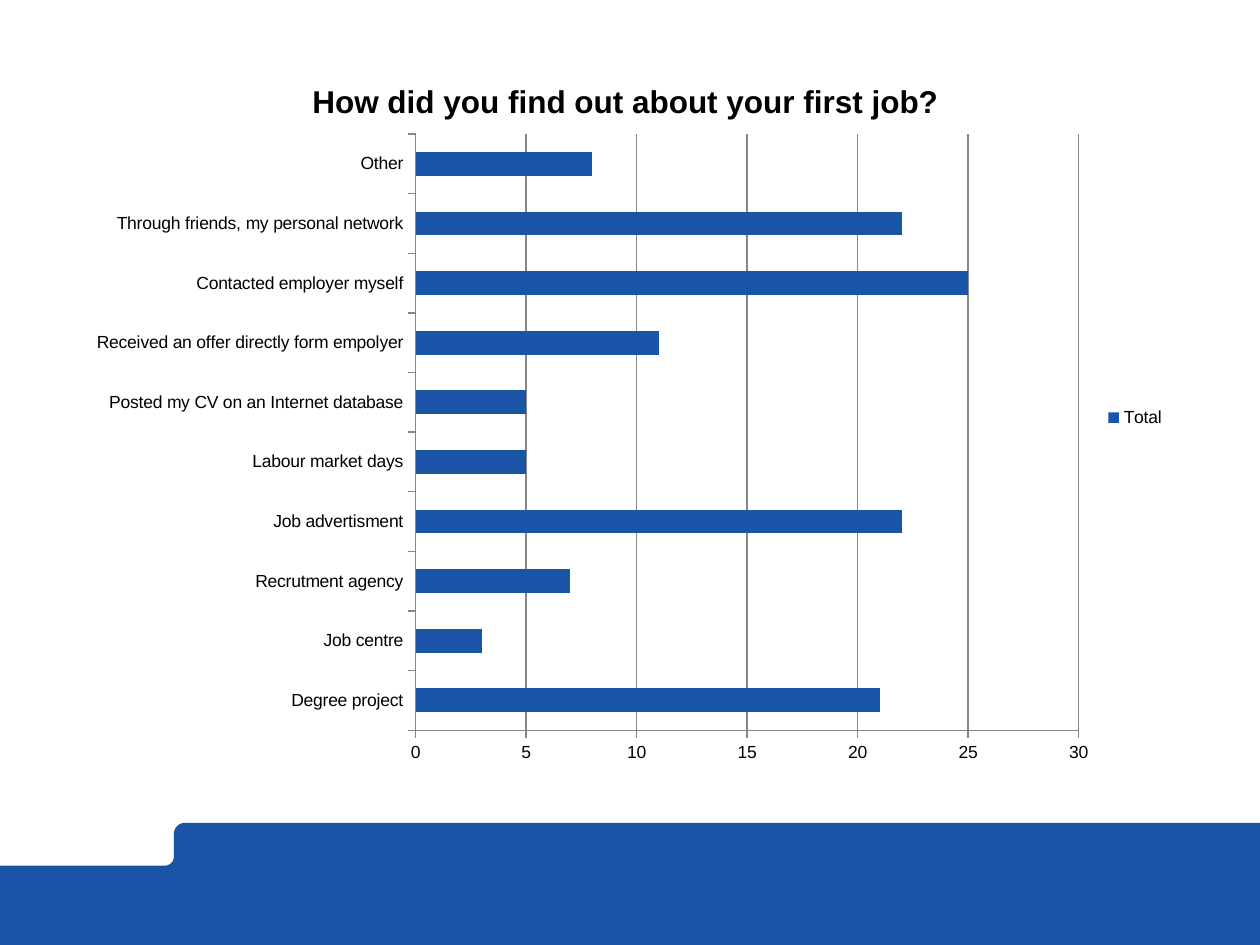
from dataclasses import dataclass
from math import cos, radians, sin

from lxml.etree import SubElement
from pptx import Presentation
from pptx.chart.data import CategoryChartData
from pptx.dml.color import RGBColor
from pptx.enum.chart import XL_CHART_TYPE, XL_LEGEND_POSITION, XL_TICK_MARK
from pptx.oxml.ns import qn
from pptx.util import Inches, Pt

COLORS = {"blue": "1954A6", "black": "000000", "grey": "868686"}


@dataclass
class Answer:
    label: str
    count: int


@dataclass
class Corner:
    center_x: float
    center_y: float
    radius: float
    start: int
    end: int


ANSWERS = [
    Answer("Degree project", 21),
    Answer("Job centre", 3),
    Answer("Recrutment agency", 7),
    Answer("Job advertisment", 22),
    Answer("Labour market days", 5),
    Answer("Posted my CV on an Internet database", 5),
    Answer("Received an offer directly form empolyer", 11),
    Answer("Contacted employer myself", 25),
    Answer("Through friends, my personal network", 22),
    Answer("Other", 8),
]

# Rounded corners of the step in the footer band
INNER_CORNER = Corner(1.31, 6.8, 0.07, 90, 0)
OUTER_CORNER = Corner(1.47, 6.62, 0.09, 180, 270)


def color(name: str) -> RGBColor:
    return RGBColor.from_string(COLORS[name])


def corner_points(corner: Corner, steps: int = 10) -> list[tuple[int, int]]:
    sweep = (corner.end - corner.start) / steps
    angles = [radians(corner.start + sweep * step) for step in range(steps + 1)]
    return [(Inches(corner.center_x + corner.radius * cos(angle)),
             Inches(corner.center_y + corner.radius * sin(angle)))
            for angle in angles]


def draw_footer(page) -> None:
    top, step, bottom, width = (Inches(n) for n in (6.53, 6.87, 7.52, 10))
    builder = page.shapes.build_freeform(0, step, scale=1.0)
    builder.add_line_segments(
        corner_points(INNER_CORNER) + corner_points(OUTER_CORNER)
        + [(width, top), (width, bottom), (0, bottom)], close=True)
    band = builder.convert_to_shape()
    band.shadow.inherit = False
    band.fill.solid()
    band.fill.fore_color.rgb = color("blue")
    band.line.fill.background()


def place_plot(chart, x: float, y: float, w: float, h: float) -> None:
    """Fix the inner plot area, as fractions of the chart frame."""
    plot_area = chart.element.find(".//" + qn("c:plotArea"))
    layout = plot_area.find(qn("c:layout"))
    if layout is None:
        layout = SubElement(plot_area, qn("c:layout"))
        plot_area.insert(0, layout)
    manual = SubElement(layout, qn("c:manualLayout"))
    settings = {"layoutTarget": "inner", "xMode": "edge", "yMode": "edge",
                "x": x, "y": y, "w": w, "h": h}
    for tag, value in settings.items():
        SubElement(manual, qn("c:" + tag)).set("val", str(value))


def style_axis(axis) -> None:
    axis.major_tick_mark = XL_TICK_MARK.OUTSIDE
    axis.minor_tick_mark = XL_TICK_MARK.NONE
    axis.format.line.color.rgb = color("grey")
    axis.format.line.width = Pt(0.75)


def draw_chart(page, answers: list[Answer]) -> None:
    data = CategoryChartData()
    data.categories = [answer.label for answer in answers]
    data.add_series("Total", [answer.count for answer in answers])
    chart = page.shapes.add_chart(
        XL_CHART_TYPE.BAR_CLUSTERED, Inches(0.58), Inches(0.43),
        Inches(8.77), Inches(5.77), data).chart
    chart.font.name = "Arial"
    chart.font.size = Pt(10)
    chart.font.color.rgb = color("black")
    place_plot(chart, 0.31, 0.11, 0.6, 0.82)

    # Title
    chart.has_title = True
    span = chart.chart_title.text_frame.paragraphs[0].add_run()
    span.text = "How did you find out about your first job?"
    span.font.name = "Arial"
    span.font.size = Pt(18)
    span.font.bold = True
    span.font.color.rgb = color("black")

    # Bars
    plot = chart.plots[0]
    plot.gap_width = 150
    plot.vary_by_categories = False
    bars = plot.series[0].format
    bars.fill.solid()
    bars.fill.fore_color.rgb = color("blue")

    # Axes and gridlines
    style_axis(chart.category_axis)
    values = chart.value_axis
    style_axis(values)
    values.minimum_scale, values.maximum_scale, values.major_unit = 0, 30, 5
    values.has_major_gridlines = True
    values.major_gridlines.format.line.color.rgb = color("grey")
    values.major_gridlines.format.line.width = Pt(0.75)

    # Legend
    chart.has_legend = True
    chart.legend.position = XL_LEGEND_POSITION.RIGHT
    chart.legend.include_in_layout = False


def main() -> None:
    deck = Presentation()
    deck.slide_width, deck.slide_height = Inches(10), Inches(7.5)
    page = deck.slides.add_slide(deck.slide_layouts[6])
    draw_footer(page)
    draw_chart(page, ANSWERS)
    deck.save("out.pptx")


if __name__ == "__main__":
    main()
